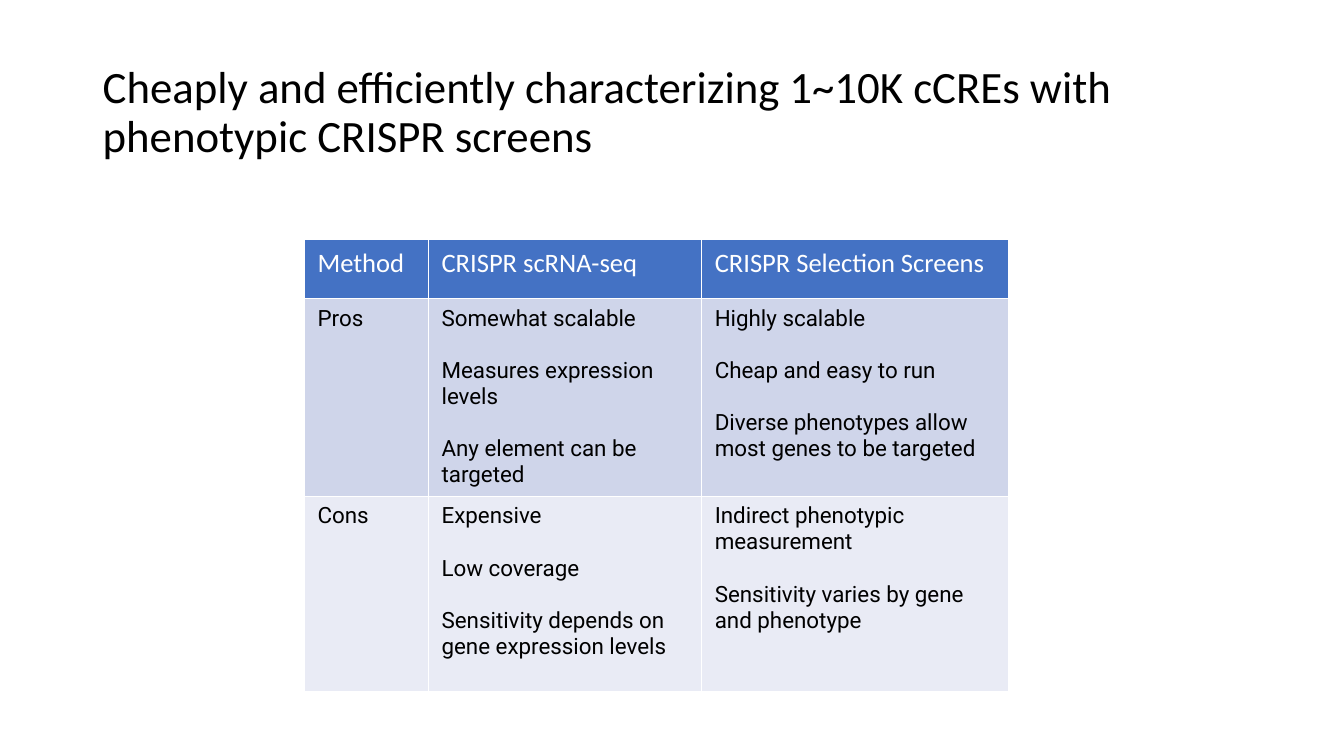
from lxml.etree import SubElement
from pptx import Presentation
from pptx.dml.color import RGBColor
from pptx.enum.text import MSO_ANCHOR
from pptx.oxml.ns import qn
from pptx.util import Inches, Pt

# Content
TITLE = "Cheaply and efficiently characterizing 1~10K cCREs with phenotypic CRISPR screens"
ROWS = [
    [["Method"], ["CRISPR scRNA-seq"], ["CRISPR Selection Screens"]],
    [["Pros"],
     ["Somewhat scalable", "Measures expression levels", "Any element can be targeted"],
     ["Highly scalable", "Cheap and easy to run",
      "Diverse phenotypes allow most genes to be targeted"]],
    [["Cons"],
     ["Expensive", "Low coverage", "Sensitivity depends on gene expression levels"],
     ["Indirect phenotypic measurement", "Sensitivity varies by gene and phenotype"]],
]
COLORS = {"text": "000000", "white": "FFFFFF", "header": "4472C4",
          "pros": "CFD5EA", "cons": "E9EBF5"}
COLUMN_WIDTHS = [1.23, 2.71, 3.04]
ROW_HEIGHTS = [0.58, 1.94, 1.94]
HEADER_STYLE = {"size": 19, "font": "Calibri", "color": "white"}
BODY_STYLE = {"size": 16, "font": "Roboto", "color": "text", "gap": 18.75}
ROW_STYLES = [("header", HEADER_STYLE), ("pros", BODY_STYLE), ("cons", BODY_STYLE)]


def write_text(frame, lines, size, font, color, gap=0, spacing=None):
    frame.word_wrap = True
    for index, line in enumerate(lines):
        para = frame.add_paragraph() if index else frame.paragraphs[0]
        if index:
            para.space_before = Pt(gap)
        if spacing:
            para.line_spacing = spacing
        span = para.add_run()
        span.text = line
        span.font.size = Pt(size)
        span.font.name = font
        span.font.color.rgb = RGBColor.from_string(COLORS[color])


def add_borders(cell, color, width):
    properties = cell._tc.get_or_add_tcPr()
    for side in ("lnL", "lnR", "lnT", "lnB"):
        line = SubElement(properties, qn(f"a:{side}"), w=str(Pt(width)))
        fill = SubElement(line, qn("a:solidFill"))
        SubElement(fill, qn("a:srgbClr"), val=COLORS[color])


deck = Presentation()
deck.slide_width, deck.slide_height = Inches(13.33), Inches(7.5)
page = deck.slides.add_slide(deck.slide_layouts[6])

# Title
title = page.shapes.add_textbox(Inches(0.92), Inches(0.4), Inches(11.5), Inches(1.45))
title.text_frame.vertical_anchor = MSO_ANCHOR.MIDDLE
write_text(title.text_frame, [TITLE], size=32, font="Calibri", color="text", spacing=0.9)

# Comparison table
table = page.shapes.add_table(
    len(ROWS), len(COLUMN_WIDTHS), Inches(3.02), Inches(2.38),
    Inches(sum(COLUMN_WIDTHS)), Inches(sum(ROW_HEIGHTS))).table
for column, width in zip(table.columns, COLUMN_WIDTHS):
    column.width = Inches(width)
for row, height, texts, (fill, style) in zip(table.rows, ROW_HEIGHTS, ROWS, ROW_STYLES):
    row.height = Inches(height)
    for cell, lines in zip(row.cells, texts):
        cell.margin_left = cell.margin_right = Inches(0.13)
        cell.margin_top, cell.margin_bottom = Inches(0.07), Inches(0.04)
        add_borders(cell, color="white", width=1)
        cell.fill.solid()
        cell.fill.fore_color.rgb = RGBColor.from_string(COLORS[fill])
        write_text(cell.text_frame, lines, **style)

deck.save("out.pptx")
